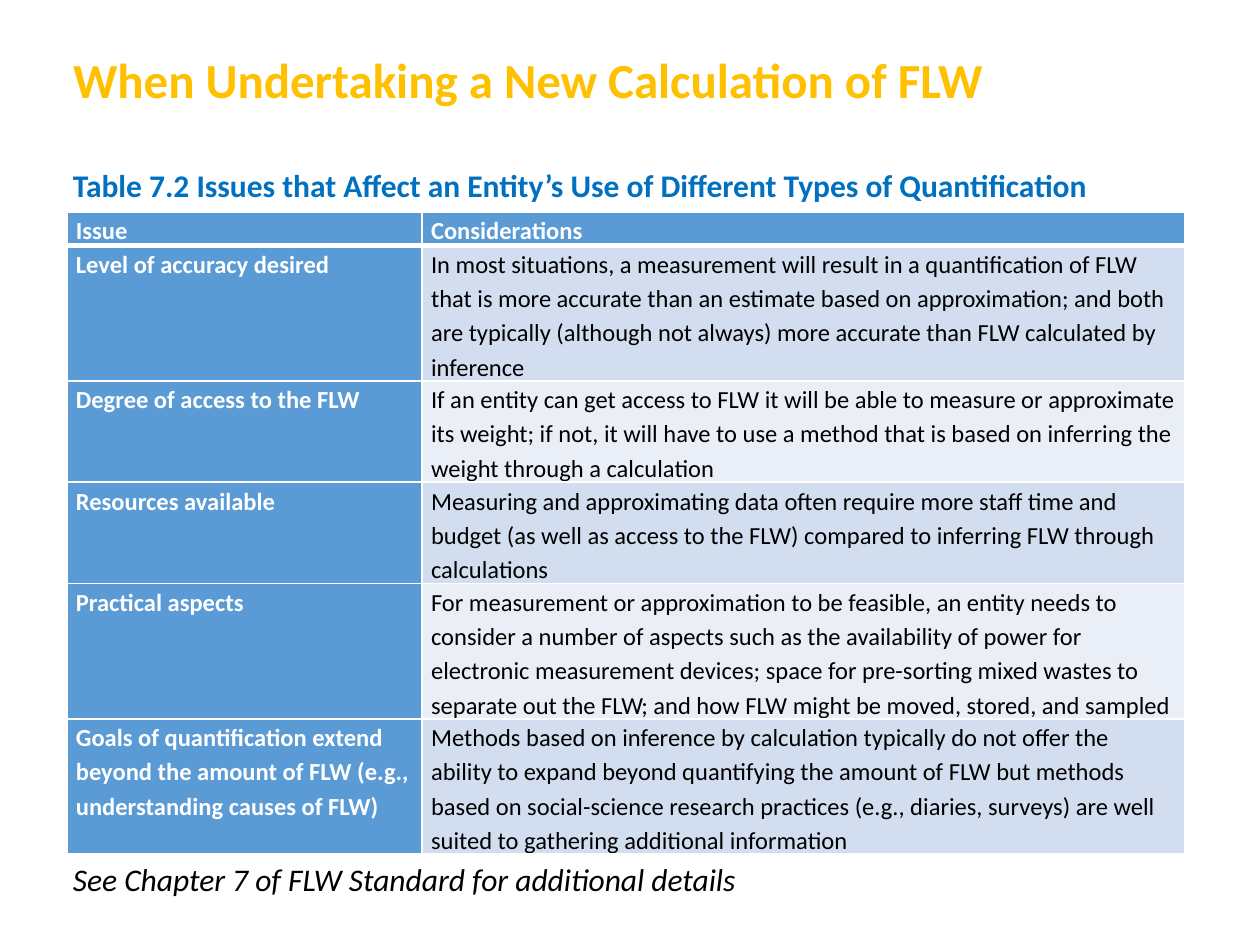
from lxml import etree
from pptx import Presentation
from pptx.dml.color import RGBColor
from pptx.enum import text as t
from pptx.oxml import ns
from pptx.util import Cm, Pt

WHITE = RGBColor(0xFF, 0xFF, 0xFF)
BLACK = RGBColor(0, 0, 0)
GOLD = RGBColor(0xFF, 0xC0, 0x00)
BLUE = RGBColor(0x00, 0x70, 0xC0)
HEAD = RGBColor(0x5B, 0x9B, 0xD5)
BANDS = (RGBColor(0xEA, 0xEF, 0xF7), RGBColor(0xD2, 0xDE, 0xEF))
LEFT = 1.22
LINE = 0.68

# Each row: lines of text, issue, considerations
ROWS = (
    (1, "Issue", "Considerations"),
    (4, "Level of accuracy desired",
     "In most situations, a measurement will result in a quantification of FLW "
     "that is more accurate than an estimate based on approximation; and both are "
     "typically (although not always) more accurate than FLW calculated by inference"),
    (3, "Degree of access to the FLW",
     "If an entity can get access to FLW it will be able to measure or approximate "
     "its weight; if not, it will have to use a method that is based on inferring "
     "the weight through a calculation"),
    (3, "Resources available",
     "Measuring and approximating data often require more staff time and budget "
     "(as well as access to the FLW) compared to inferring FLW through calculations"),
    (4, "Practical aspects",
     "For measurement or approximation to be feasible, an entity needs to consider "
     "a number of aspects such as the availability of power for electronic "
     "measurement devices; space for pre-sorting mixed wastes to separate out the "
     "FLW; and how FLW might be moved, stored, and sampled"),
    (4, "Goals of quantification extend beyond the amount of FLW (e.g., "
     "understanding causes of FLW)",
     "Methods based on inference by calculation typically do not offer the ability "
     "to expand beyond quantifying the amount of FLW but methods based on "
     "social-science research practices (e.g., diaries, surveys) are well suited to "
     "gathering additional information"),
)


def write(frame, words, size, color, bold=False, italic=False, space=1.0):
    """Add one run of text to the first paragraph of a frame."""
    para = frame.paragraphs[0]
    para.alignment = t.PP_ALIGN.LEFT
    para.line_spacing = space
    run = para.add_run()
    run.text = words
    font = run.font
    font.name, font.size = "Calibri", Pt(size)
    font.bold, font.italic = bold, italic
    font.color.rgb = color


def add_title(slide, words):
    """Place and fill the title placeholder."""
    title = slide.shapes.title
    title.left, title.top = Cm(LEFT), Cm(1)
    title.width, title.height = Cm(24.18), Cm(1.35)
    frame = title.text_frame
    frame.auto_size = t.MSO_AUTO_SIZE.NONE
    frame.vertical_anchor = t.MSO_ANCHOR.TOP
    write(frame, words, 28, GOLD, bold=True, space=0.9)


def add_note(slide, top, width, words, color, **style):
    """Add a one-line text box at the left margin."""
    box = slide.shapes.add_textbox(Cm(LEFT), Cm(top), Cm(width), Cm(1.02))
    box.text_frame.word_wrap = True
    write(box.text_frame, words, 18, color, **style)


def edge(cell, side, width):
    """Draw one white border of a cell."""
    props = cell._tc.get_or_add_tcPr()
    line = etree.Element(ns.qn("a:" + side), w=str(Pt(width)))
    fill = etree.SubElement(line, ns.qn("a:solidFill"))
    etree.SubElement(fill, ns.qn("a:srgbClr"), val=str(WHITE))
    props.insert(len(props) - 1, line)


def fill_cell(cell, words, row, col):
    """Format and fill one table cell."""
    key = row == 0 or col == 0
    cell.margin_left = cell.margin_right = Cm(0.18)
    cell.margin_top = cell.margin_bottom = 0
    cell.fill.solid()
    cell.fill.fore_color.rgb = HEAD if key else BANDS[row % 2]
    for side in ("lnL", "lnR", "lnT", "lnB"):
        thick = (row == 0 and side == "lnB") or (row == 1 and side == "lnT")
        edge(cell, side, 3 if thick else 1)
    write(cell.text_frame, words, 14, WHITE if key else BLACK, bold=key, space=1.15)


def add_grid(slide):
    """Add the table of issues and considerations."""
    high = LINE * sum(row[0] for row in ROWS)
    grid = slide.shapes.add_table(
        len(ROWS), 2, Cm(1.35), Cm(4.27), Cm(22.53), Cm(high)).table
    grid.columns[0].width, grid.columns[1].width = Cm(7.16), Cm(15.37)
    for row, (lines, *cells) in enumerate(ROWS):
        grid.rows[row].height = Cm(LINE * lines)
        for col, words in enumerate(cells):
            fill_cell(grid.cell(row, col), words, row, col)


def main():
    """Build the slide and save it."""
    deck = Presentation()
    deck.slide_width, deck.slide_height = Cm(25.4), Cm(19.05)
    slide = deck.slides.add_slide(deck.slide_layouts[5])
    add_title(slide, "When Undertaking a New Calculation of FLW")
    add_note(slide, 3.23, 21.16, "Table 7.2 Issues that Affect an Entity’s Use of "
             "Different Types of Quantification", BLUE, bold=True)
    add_grid(slide)
    add_note(slide, 17.22, 14.02,
             "See Chapter 7 of FLW Standard for additional details", BLACK, italic=True)
    deck.save("out.pptx")


if __name__ == "__main__":
    main()
